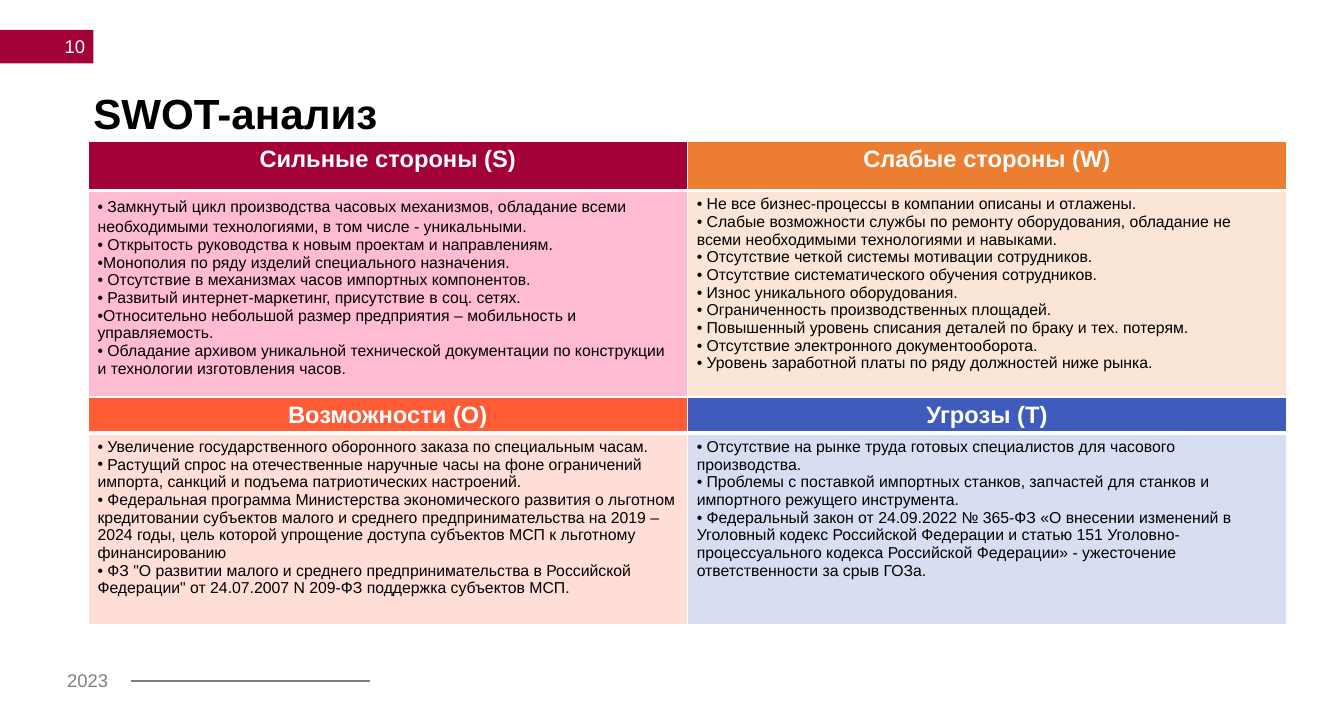
import pptx
import pptx.dml.color
import pptx.enum.shapes
import pptx.enum.text
import pptx.oxml.ns
import pptx.util
from lxml import etree
from pptx.util import Cm, Pt

FONT = "Arial"
COLORS = {
    "white": "FFFFFF", "black": "000000", "grey": "808080", "crimson": "A30236",
    "pink": "FEBBD1", "orange": "ED7D31", "cream": "FBE5D6", "coral": "FF5C36",
    "peach": "FFDED7", "blue": "3F5CBD", "pale_blue": "D8DEF2",
}
STRENGTHS = ("Сильные стороны (S)", "crimson", "pink", [
    " Замкнутый цикл производства часовых механизмов, обладание всеми необходимыми технологиями, "
    "в том числе - уникальными.",
    " Открытость руководства к новым проектам и направлениям.",
    "Монополия по ряду изделий специального назначения.",
    " Отсутствие в механизмах часов импортных компонентов.",
    " Развитый интернет-маркетинг, присутствие в соц. сетях.",
    "Относительно небольшой размер предприятия – мобильность и управляемость.",
    " Обладание архивом уникальной технической документации по конструкции и технологии "
    "изготовления часов.",
])
WEAKNESSES = ("Слабые стороны (W)", "orange", "cream", [
    " Не все бизнес-процессы в компании описаны и отлажены.",
    " Слабые возможности службы по ремонту оборудования, обладание не всеми необходимыми "
    "технологиями и навыками.",
    " Отсутствие четкой системы мотивации сотрудников.",
    " Отсутствие систематического обучения сотрудников.",
    " Износ уникального оборудования.",
    " Ограниченность производственных площадей.",
    " Повышенный уровень списания деталей по браку и тех. потерям.",
    " Отсутствие электронного документооборота.",
    " Уровень заработной платы по ряду должностей ниже рынка.",
])
OPPORTUNITIES = ("Возможности (O)", "coral", "peach", [
    " Увеличение государственного оборонного заказа по специальным часам.",
    " Растущий спрос на отечественные наручные часы на фоне ограничений импорта, санкций и "
    "подъема патриотических настроений.",
    " Федеральная программа Министерства экономического развития о льготном кредитовании "
    "субъектов малого и среднего предпринимательства на 2019 – 2024 годы, цель которой "
    "упрощение доступа субъектов МСП к льготному финансированию",
    " ФЗ \"О развитии малого и среднего предпринимательства в Российской Федерации\" "
    "от 24.07.2007 N 209-ФЗ поддержка субъектов МСП.",
])
THREATS = ("Угрозы (T)", "blue", "pale_blue", [
    " Отсутствие на рынке труда готовых специалистов для часового производства.",
    " Проблемы с поставкой импортных станков, запчастей для станков и импортного режущего "
    "инструмента.",
    " Федеральный закон от 24.09.2022 № 365-ФЗ «О внесении изменений в Уголовный кодекс "
    "Российской Федерации и статью 151 Уголовно-процессуального кодекса Российской Федерации» "
    "- ужесточение ответственности за срыв ГОЗа.",
])


def rgb(color):
    """Return the named colour."""
    return pptx.dml.color.RGBColor.from_string(COLORS[color])


def style(paragraph, size, color, bold=False, align=pptx.enum.text.PP_ALIGN.LEFT):
    """Align a paragraph and format its runs."""
    paragraph.alignment = align
    for run in paragraph.runs:
        run.font.name = FONT
        run.font.size = Pt(size)
        run.font.bold = bold
        run.font.color.rgb = rgb(color)


def add_bullet(paragraph):
    """Give a paragraph a round bullet without indent."""
    properties = paragraph._p.get_or_add_pPr()
    properties.set("marL", "0")
    properties.set("indent", "0")
    font = etree.SubElement(properties, pptx.oxml.ns.qn("a:buFont"))
    font.set("typeface", FONT)
    etree.SubElement(properties, pptx.oxml.ns.qn("a:buChar")).set("char", "•")


def paint_cell(cell, color, top, bottom):
    """Fill a cell and draw its white borders, top and bottom in points."""
    properties = cell._tc.get_or_add_tcPr()
    for side, width in (("L", 1), ("R", 1), ("T", top), ("B", bottom)):
        border = etree.SubElement(properties, pptx.oxml.ns.qn(f"a:ln{side}"))
        border.set("w", str(Pt(width)))
        solid = etree.SubElement(border, pptx.oxml.ns.qn("a:solidFill"))
        etree.SubElement(solid, pptx.oxml.ns.qn("a:srgbClr")).set("val", COLORS["white"])
    cell.fill.solid()
    cell.fill.fore_color.rgb = rgb(color)


def add_page_badge(slide, left, top, width, height):
    """Place the page number on its coloured tab."""
    badge = slide.shapes.add_shape(
        pptx.enum.shapes.MSO_SHAPE.RECTANGLE, left, top, width, height)
    badge.shadow.inherit = False
    badge.fill.solid()
    badge.fill.fore_color.rgb = rgb("crimson")
    badge.line.fill.background()
    badge.text_frame.text = "10"
    badge.text_frame.margin_right = Cm(0.22)
    badge.text_frame.vertical_anchor = pptx.enum.text.MSO_ANCHOR.MIDDLE
    style(badge.text_frame.paragraphs[0], 14, "white", align=pptx.enum.text.PP_ALIGN.RIGHT)


def add_title(slide, left, top, width, height):
    """Place the slide heading."""
    title = slide.shapes.title
    title.left, title.top, title.width, title.height = left, top, width, height
    frame = title.text_frame
    frame.text = "SWOT-анализ"
    frame.margin_left = frame.margin_top = frame.margin_right = frame.margin_bottom = 0
    frame.vertical_anchor = pptx.enum.text.MSO_ANCHOR.TOP
    frame.paragraphs[0].line_spacing = 0.9
    style(frame.paragraphs[0], 32, "black", bold=True)


def add_swot_pair(slide, left, top, width, row_heights, quadrants):
    """Place two SWOT quadrants side by side as a table."""
    table = slide.shapes.add_table(
        2, len(quadrants), left, top, width, sum(row_heights)).table
    table.horz_banding = False
    for row, height in zip(table.rows, row_heights):
        row.height = height
    for column, (heading, heading_color, body_color, points) in enumerate(quadrants):
        table.columns[column].width = width // len(quadrants)
        header, body = table.cell(0, column), table.cell(1, column)
        paint_cell(header, heading_color, 1, 3)
        paint_cell(body, body_color, 3, 1)
        header.text_frame.text = heading
        style(header.text_frame.paragraphs[0], 18, "white", bold=True,
              align=pptx.enum.text.PP_ALIGN.CENTER)
        body.text_frame.text = "\n".join(points)
        for paragraph in body.text_frame.paragraphs:
            add_bullet(paragraph)
            style(paragraph, 12, "black")
    return table


def add_footer(slide, left, top, width, height):
    """Place the year and the rule that follows it."""
    year = slide.shapes.add_textbox(left, top, Cm(1.7), height)
    year.text_frame.word_wrap = True
    year.text_frame.text = "2023"
    style(year.text_frame.paragraphs[0], 14, "grey")
    middle = top + Cm(0.45)
    rule = slide.shapes.add_connector(
        pptx.enum.shapes.MSO_CONNECTOR.STRAIGHT, left + Cm(1.95), middle, left + width, middle)
    rule.line.color.rgb = rgb("grey")
    rule.line.width = Pt(1.5)
    etree.SubElement(rule._element.spPr, pptx.oxml.ns.qn("a:effectLst"))


def main():
    """Build and save the SWOT slide."""
    deck = pptx.Presentation()
    deck.slide_width, deck.slide_height = Cm(36), Cm(19)
    slide = deck.slides.add_slide(deck.slide_layouts[5])
    add_page_badge(slide, 0, Cm(0.8), Cm(2.5), Cm(0.9))
    add_title(slide, Cm(2.5), Cm(2.5), Cm(26.6), Cm(1.3))
    internal = add_swot_pair(slide, Cm(2.36), Cm(3.79), Cm(32.1), (Cm(1.32), Cm(5.52)),
                             (STRENGTHS, WEAKNESSES))
    internal.cell(1, 0).text_frame.paragraphs[0].line_spacing = 1.15
    add_swot_pair(slide, Cm(2.36), Cm(10.64), Cm(32.1), (Cm(0.97), Cm(5.13)),
                  (OPPORTUNITIES, THREATS))
    add_footer(slide, Cm(1.55), Cm(17.8), Cm(8.36), Cm(0.86))
    deck.save("out.pptx")


if __name__ == "__main__":
    main()
